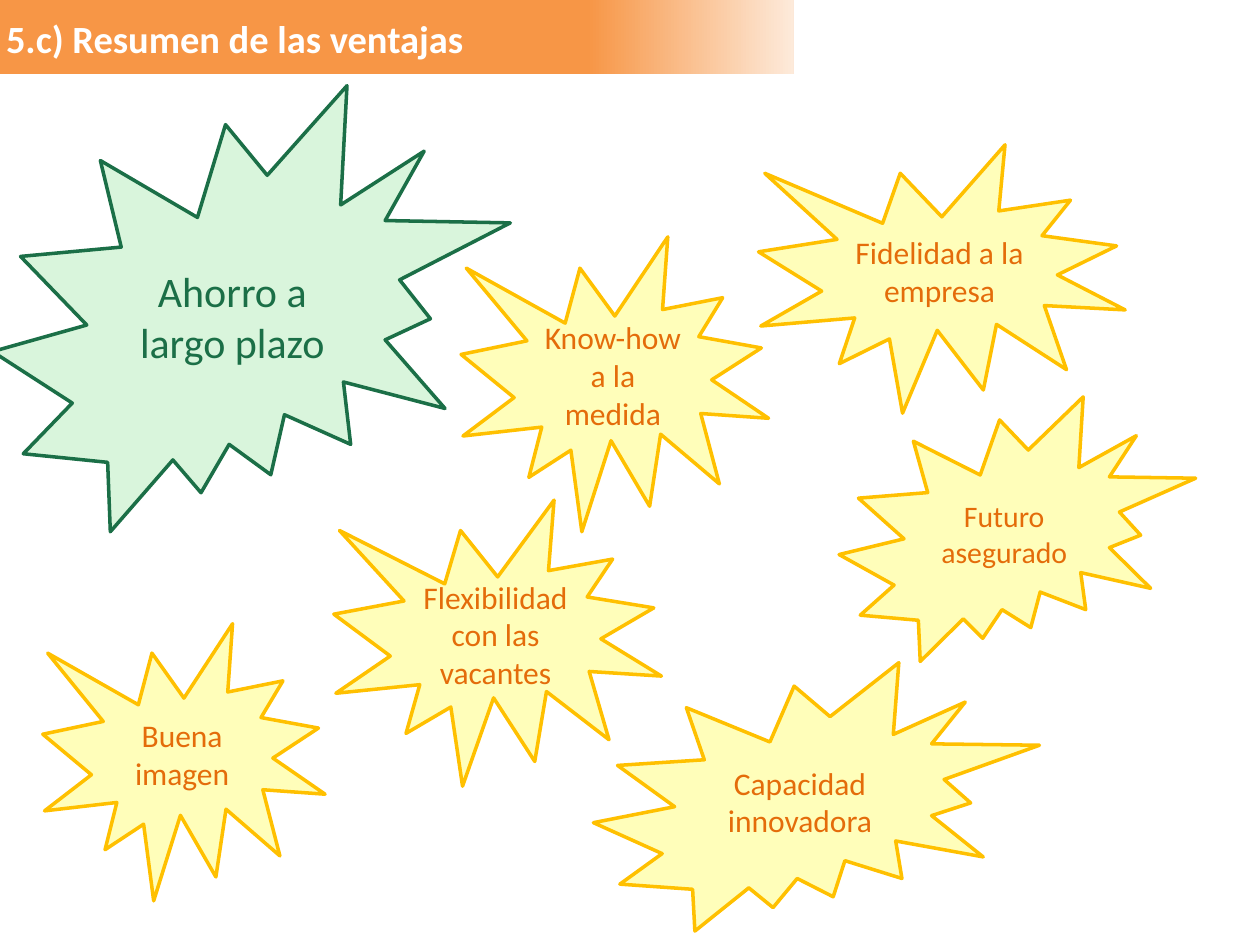
from pptx import Presentation
from pptx.dml.color import RGBColor
from pptx.enum.shapes import MSO_SHAPE
from pptx.enum.text import MSO_ANCHOR, MSO_AUTO_SIZE, PP_ALIGN
from pptx.util import Inches, Pt

WIDTH, HEIGHT = Inches(10), Inches(7.5)
FONT = "Calibri"

WHITE = RGBColor(0xFF, 0xFF, 0xFF)
ORANGE = RGBColor(0xF7, 0x96, 0x46)
PEACH = RGBColor(0xFD, 0xEA, 0xDA)
DARK_ORANGE = RGBColor(0xE4, 0x6C, 0x0A)
GOLD = RGBColor(0xFF, 0xC0, 0x00)
PALE_YELLOW = RGBColor(0xFF, 0xFE, 0xBA)
GREEN = RGBColor(0x1B, 0x6F, 0x47)
PALE_GREEN = RGBColor(0xD9, 0xF5, 0xDC)

# Fill, line and text colours
GREEN_STYLE = (PALE_GREEN, GREEN, GREEN)
YELLOW_STYLE = (PALE_YELLOW, GOLD, DARK_ORANGE)

ROUND_BURST = MSO_SHAPE.EXPLOSION1
SLANTED_BURST = MSO_SHAPE.EXPLOSION2

# Text, outline, (left, top, width, height), text size, colours
ADVANTAGES = [
    ("Ahorro a largo plazo", SLANTED_BURST, (-0.6, 9.07, 41.1, 47.2), 24, GREEN_STYLE),
    ("Flexibilidad con las vacantes", ROUND_BURST, (26.5, 52.93, 26, 30.27), 18, YELLOW_STYLE),
    ("Know-how a la medida", ROUND_BURST, (36.6, 25.07, 24.4, 31.2), 18, YELLOW_STYLE),
    ("Fidelidad a la empresa", ROUND_BURST, (60.2, 15.33, 29.1, 28.4), 18, YELLOW_STYLE),
    ("Buena imagen", ROUND_BURST, (3.4, 66, 22.4, 29.33), 18, YELLOW_STYLE),
    ("Futuro asegurado", SLANTED_BURST, (66.6, 42, 28.3, 28), 17, YELLOW_STYLE),
    ("Capacidad innovadora", SLANTED_BURST, (47.1, 70.13, 35.4, 28.4), 18, YELLOW_STYLE),
]


def place(left, top, width, height):
    """Turn percentages of the slide's width and height into lengths."""
    return (int(WIDTH * left / 100), int(HEIGHT * top / 100),
            int(WIDTH * width / 100), int(HEIGHT * height / 100))


def set_text(sp, text, size, color, bold=False):
    tf = sp.text_frame
    tf.word_wrap = True
    tf.text = text
    font = tf.paragraphs[0].runs[0].font
    font.name, font.size, font.bold = FONT, Pt(size), bold
    font.color.rgb = color
    return tf


def add_title_band(s):
    sp = s.shapes.add_shape(MSO_SHAPE.RECTANGLE, *place(0, 0, 63, 7.87))
    sp.shadow.inherit = False
    sp.line.fill.background()
    sp.fill.gradient()
    sp.fill.gradient_angle = 0
    stops = zip(sp.fill.gradient_stops, (0.74, 1), (ORANGE, PEACH))
    for stop, position, color in stops:
        stop.position = position
        stop.color.rgb = color


def add_title(s, text):
    sp = s.shapes.add_textbox(*place(-0.5, 0.93, 66.3, 6.27))
    tf = set_text(sp, text, 22, WHITE, bold=True)
    tf.auto_size = MSO_AUTO_SIZE.SHAPE_TO_FIT_TEXT


def add_burst(s, text, outline, box, size, style):
    fill, line, color = style
    sp = s.shapes.add_shape(outline, *place(*box))
    sp.shadow.inherit = False
    sp.fill.solid()
    sp.fill.fore_color.rgb = fill
    sp.line.color.rgb = line
    sp.line.width = Pt(2)
    tf = set_text(sp, text, size, color)
    tf.vertical_anchor = MSO_ANCHOR.MIDDLE
    tf.paragraphs[0].alignment = PP_ALIGN.CENTER


def main():
    prs = Presentation()
    prs.slide_width, prs.slide_height = WIDTH, HEIGHT
    s = prs.slides.add_slide(prs.slide_layouts[6])
    add_title_band(s)
    add_title(s, "5.c) Resumen de las ventajas")
    for advantage in ADVANTAGES:
        add_burst(s, *advantage)
    prs.save("out.pptx")


if __name__ == "__main__":
    main()
